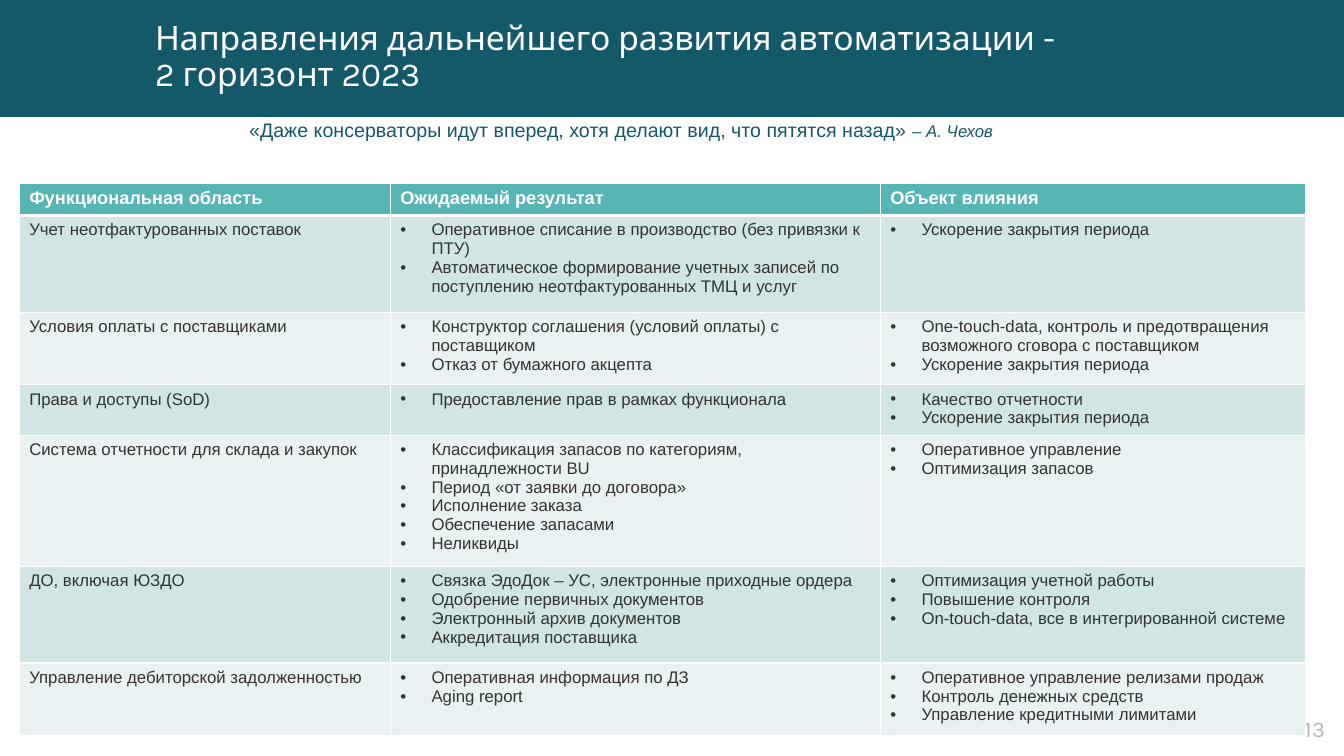
import pptx
import pptx.dml.color
import pptx.enum.shapes
import pptx.enum.text
import pptx.oxml.ns
import pptx.util
from lxml import etree

Inches = pptx.util.Inches
Pt = pptx.util.Pt
qn = pptx.oxml.ns.qn
Align = pptx.enum.text.PP_ALIGN
Anchor = pptx.enum.text.MSO_ANCHOR

theme = {
    "band": "145969", "white": "FFFFFF", "header": "57B6B3",
    "odd": "D0E5E4", "even": "E9F2F2", "text": "333333", "number": "B6B6B5",
    "title_font": "Karla", "body_font": "Arial",
    "title_size": 24, "quote_size": 14, "author_size": 12,
    "number_size": 16, "header_size": 13, "cell_size": 12,
}

header = ["Функциональная область", "Ожидаемый результат", "Объект влияния"]
areas = [
    ("Учет неотфактурованных поставок",
     ["Оперативное списание в производство (без привязки к ПТУ)",
      "Автоматическое формирование учетных записей по поступлению неотфактурованных ТМЦ и услуг"],
     ["Ускорение закрытия периода"]),
    ("Условия оплаты с поставщиками",
     ["Конструктор соглашения (условий оплаты) с поставщиком",
      "Отказ от бумажного акцепта"],
     ["One-touch-data, контроль и предотвращения возможного сговора с поставщиком",
      "Ускорение закрытия периода"]),
    ("Права и доступы (SoD)",
     ["Предоставление прав в рамках функционала"],
     ["Качество отчетности", "Ускорение закрытия периода"]),
    ("Система отчетности для склада и закупок",
     ["Классификация запасов по категориям, принадлежности BU",
      "Период «от заявки до договора»", "Исполнение заказа",
      "Обеспечение запасами", "Неликвиды"],
     ["Оперативное управление", "Оптимизация запасов"]),
    ("ДО, включая ЮЗДО",
     ["Связка ЭдоДок – УС, электронные приходные ордера",
      "Одобрение первичных документов", "Электронный архив документов",
      "Аккредитация поставщика"],
     ["Оптимизация учетной работы", "Повышение контроля",
      "On-touch-data, все в интегрированной системе"]),
    ("Управление дебиторской задолженностью",
     ["Оперативная информация по ДЗ", "Aging report"],
     ["Оперативное управление релизами продаж", "Контроль денежных средств",
      "Управление кредитными лимитами"]),
]
column_widths = [3.68, 4.86, 4.22]
row_heights = [0.3, 0.96, 0.72, 0.44, 1.2, 0.96, 0.72]


def add_run(paragraph, text, font, size, color, bold=False, italic=False):
    run = paragraph.add_run()
    run.text = text
    run.font.name = theme[font]
    run.font.size = Pt(theme[size])
    run.font.color.rgb = pptx.dml.color.RGBColor.from_string(theme[color])
    run.font.bold = bold
    run.font.italic = italic


def add_text(left, top, width, height, anchor, align, spacing):
    frame = slide.shapes.add_textbox(
        Inches(left), Inches(top), Inches(width), Inches(height)).text_frame
    frame.word_wrap = True
    frame.vertical_anchor = anchor
    paragraph = frame.paragraphs[0]
    paragraph.alignment = align
    paragraph.line_spacing = spacing
    return paragraph


presentation = pptx.Presentation()
presentation.slide_width = Inches(13.33)
presentation.slide_height = Inches(7.5)
slide = presentation.slides.add_slide(presentation.slide_layouts[6])

band = slide.shapes.add_shape(
    pptx.enum.shapes.MSO_SHAPE.RECTANGLE, 0, 0, Inches(13.33), Inches(1.16))
band.shadow.inherit = False
band.fill.solid()
band.fill.fore_color.rgb = pptx.dml.color.RGBColor.from_string(theme["band"])
band.line.fill.background()

title = add_text(1.44, 0.04, 10.54, 1.07, Anchor.MIDDLE, Align.LEFT, 0.9)
add_run(title, "Направления дальнейшего развития автоматизации -",
        "title_font", "title_size", "white")
title.add_line_break()
add_run(title, "2 горизонт 2023", "title_font", "title_size", "white")

quote = add_text(-0.16, 1.17, 12.64, 0.4, Anchor.TOP, Align.CENTER, 0.8)
add_run(quote, "«Даже консерваторы идут вперед, хотя делают вид, что пятятся назад» ",
        "body_font", "quote_size", "band")
add_run(quote, "– ", "body_font", "author_size", "band")
add_run(quote, "А. Чехов", "body_font", "author_size", "band", italic=True)

number = add_text(12.75, 6.96, 0.58, 0.54, Anchor.MIDDLE, Align.CENTER, 1.0)
add_run(number, "13", "title_font", "number_size", "number")

table = slide.shapes.add_table(
    len(row_heights), len(column_widths), Inches(0.19), Inches(1.82),
    Inches(sum(column_widths)), Inches(sum(row_heights))).table
table.horz_banding = False
for column, width in zip(table.columns, column_widths):
    column.width = Inches(width)
for row, height in zip(table.rows, row_heights):
    row.height = Inches(height)

for row_index, row_values in enumerate([header] + areas):
    is_header = row_index == 0
    fill = "header" if is_header else ("odd" if row_index % 2 else "even")
    for column_index, value in enumerate(row_values):
        cell = table.cell(row_index, column_index)
        properties = cell._tc.get_or_add_tcPr()
        for side in ("L", "R", "T", "B"):
            thick = (row_index, side) in ((0, "B"), (1, "T"))
            border = etree.SubElement(
                properties, qn("a:ln" + side), w=str(Pt(3 if thick else 1)))
            border_fill = etree.SubElement(border, qn("a:solidFill"))
            etree.SubElement(border_fill, qn("a:srgbClr"), val=theme["white"])
        cell.fill.solid()
        cell.fill.fore_color.rgb = pptx.dml.color.RGBColor.from_string(theme[fill])

        bulleted = isinstance(value, list)
        for item_index, item in enumerate(value if bulleted else [value]):
            frame = cell.text_frame
            paragraph = frame.add_paragraph() if item_index else frame.paragraphs[0]
            if bulleted:
                bullet = paragraph._p.get_or_add_pPr()
                bullet.set("marL", str(Inches(0.31)))
                bullet.set("indent", str(-Inches(0.31)))
                bullet_color = etree.SubElement(bullet, qn("a:buClr"))
                etree.SubElement(bullet_color, qn("a:srgbClr"), val=theme["text"])
                etree.SubElement(bullet, qn("a:buFont"), typeface=theme["body_font"])
                etree.SubElement(bullet, qn("a:buChar"), char="•")
            add_run(paragraph, item, "body_font",
                    "header_size" if is_header else "cell_size",
                    "white" if is_header else "text", bold=is_header)

presentation.save("out.pptx")
